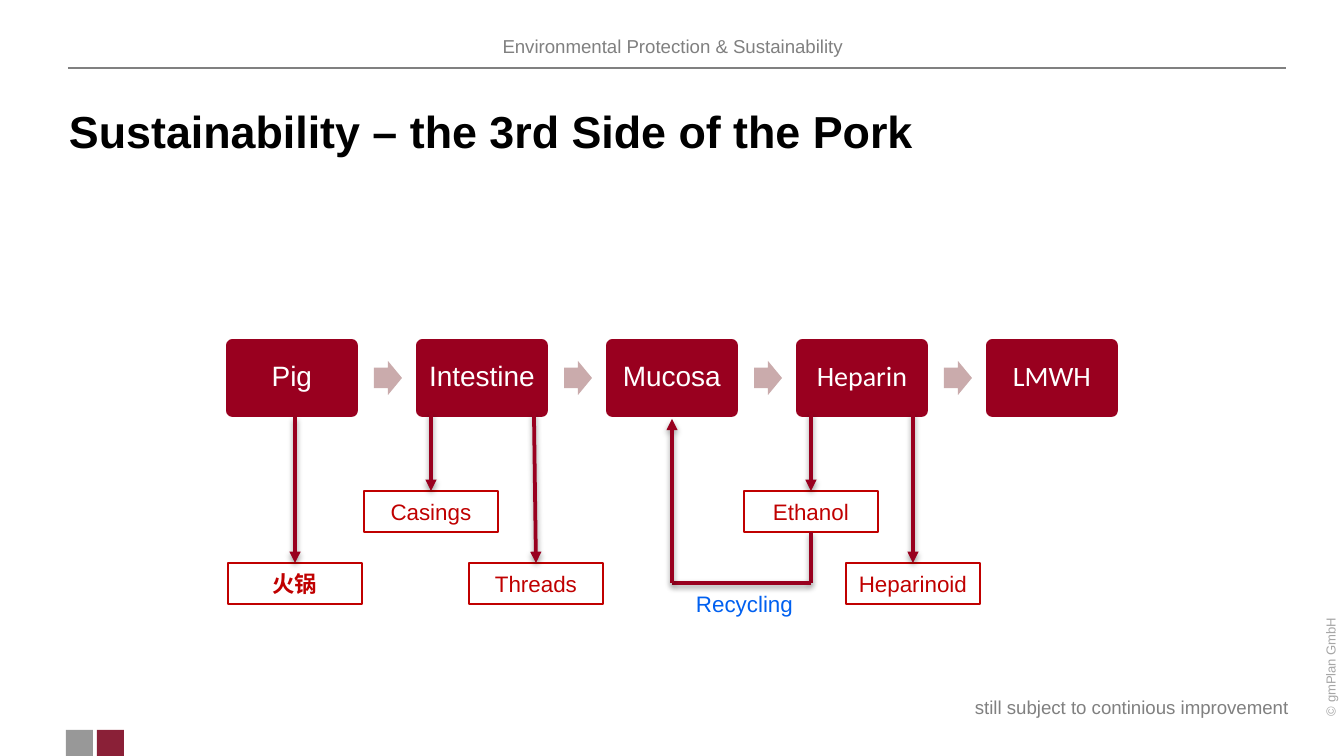
from dataclasses import dataclass

from lxml.etree import SubElement
from pptx import Presentation
from pptx.dml.color import RGBColor
from pptx.enum.shapes import MSO_CONNECTOR as Connector, MSO_SHAPE as Shape
from pptx.enum.text import MSO_ANCHOR as Anchor, PP_ALIGN as Align
from pptx.oxml.ns import qn
from pptx.util import Pt

EMU_PER_PX = 914400 / 134.4
TOP, BOTTOM = 0, 2


def px(length):
    return round(length * EMU_PER_PX)


@dataclass(frozen=True)
class Theme:
    font: str = "Arial"
    step_font: str = "Calibri"
    cjk_font: str = "Noto Sans CJK SC"
    black: str = "000000"
    white: str = "FFFFFF"
    gray: str = "808080"
    pale_gray: str = "A6A6A6"
    square_gray: str = "989898"
    square_red: str = "8A2037"
    crimson: str = "99001F"
    rose: str = "CAABAC"
    red: str = "C00000"
    blue: str = "0060F0"
    title: int = 24
    step: int = 15
    label: int = 12
    small: int = 10
    tiny: int = 7


class Canvas:
    def __init__(self, slide, theme):
        self.slide = slide
        self.theme = theme

    def set_text(self, target, words, size, color, font=None, bold=False,
                 align=Align.CENTER, anchor=Anchor.MIDDLE, inset=7, spacing=None):
        frame = target.text_frame
        frame.word_wrap = True
        frame.vertical_anchor = anchor
        frame.margin_left = frame.margin_right = px(inset)
        frame.margin_top = frame.margin_bottom = px(inset)
        paragraph = frame.paragraphs[0]
        paragraph.alignment = align
        if spacing:
            paragraph.line_spacing = spacing
        run = paragraph.add_run()
        run.text = words
        run.font.name = font or self.theme.font
        run.font.size = Pt(size)
        run.font.bold = bold
        run.font.color.rgb = RGBColor.from_string(color)
        # East Asian glyphs take their font from a separate element
        SubElement(run.font._element, qn("a:ea"), typeface=run.font.name)

    def text(self, left, top, width, height, words, size, color, **style):
        box = self.slide.shapes.add_textbox(px(left), px(top), px(width), px(height))
        self.set_text(box, words, size, color, **style)
        return box

    def shape(self, kind, left, top, width, height, fill=None, line=None,
              weight=1, adjust=()):
        shape = self.slide.shapes.add_shape(
            kind, px(left), px(top), px(width), px(height))
        shape.shadow.inherit = False
        for index, value in enumerate(adjust):
            shape.adjustments[index] = value
        if fill:
            shape.fill.solid()
            shape.fill.fore_color.rgb = RGBColor.from_string(fill)
        else:
            shape.fill.background()
        if line:
            shape.line.color.rgb = RGBColor.from_string(line)
            shape.line.width = Pt(weight)
        else:
            shape.line.fill.background()
        return shape

    def line(self, start, end, color, weight, arrow=False, shadow=False,
             begin_at=None, end_at=None):
        link = self.slide.shapes.add_connector(
            Connector.STRAIGHT, *map(px, start), *map(px, end))
        link.line.color.rgb = RGBColor.from_string(color)
        link.line.width = Pt(weight)
        if begin_at:
            link.begin_connect(*begin_at)
        if end_at:
            link.end_connect(*end_at)
        if arrow:
            SubElement(link.line._get_or_add_ln(), qn("a:tailEnd"), type="triangle")
        effects = SubElement(link._element.spPr, qn("a:effectLst"))
        if shadow:
            outer = SubElement(effects, qn("a:outerShdw"), blurRad="38100",
                               dist="20000", dir="5400000", rotWithShape="0")
            tint = SubElement(outer, qn("a:srgbClr"), val=self.theme.black)
            SubElement(tint, qn("a:alpha"), val="38000")
        return link

    def flow(self, start, end, arrow=True, **joins):
        return self.line(start, end, self.theme.crimson, 2, arrow, True, **joins)


def main():
    theme = Theme()
    deck = Presentation()
    deck.slide_width, deck.slide_height = px(1344), px(756)
    canvas = Canvas(deck.slides.add_slide(deck.slide_layouts[6]), theme)

    # Page frame
    for left, color in ((66, theme.square_gray), (97, theme.square_red)):
        canvas.shape(Shape.RECTANGLE, left, 730, 27, 26, fill=color)
    canvas.text(1, 28, 1343, 34, "Environmental Protection & Sustainability",
                theme.small, theme.gray, anchor=Anchor.TOP)
    canvas.line((68, 68), (1286, 68), theme.gray, 0.75)
    notice = canvas.text(1242, 654, 177, 26, "© gmPlan GmbH",
                         theme.tiny, theme.pale_gray)
    notice.rotation = 270

    # Title and remark
    canvas.text(69, 93, 1216, 75, "Sustainability – the 3rd Side of the Pork",
                theme.title, theme.black, bold=True, align=Align.LEFT, inset=0)
    canvas.text(759, 686, 529, 42, "still subject to continious improvement",
                theme.small, theme.gray, align=Align.RIGHT, inset=0)

    # Process chain
    first_left, pitch = 224, 190
    chain = (("Pig", theme.font), ("Intestine", theme.font),
             ("Mucosa", theme.font), ("Heparin", theme.step_font),
             ("LMWH", theme.step_font))
    steps = {}
    for index, (name, font) in enumerate(chain):
        left = first_left + index * pitch
        if index:
            canvas.shape(Shape.RIGHT_ARROW, left - 40, 361, 28, 34,
                         fill=theme.rose, adjust=(0.6, 0.5))
        steps[name] = canvas.shape(Shape.ROUNDED_RECTANGLE, left, 337, 136, 82,
                                   theme.crimson, theme.white, 2, (0.1,))
        canvas.set_text(steps[name], name, theme.step, theme.white,
                        font=font, spacing=0.9)

    # By-products: name, box centre, box top, arrow start
    upper, lower = 491, 563
    by_products = (("火锅", 295, lower, (295, 417)),
                   ("Casings", 431, upper, (431, 413)),
                   ("Threads", 536, lower, (534, 413)),
                   ("Ethanol", 811, upper, (811, 413)),
                   ("Heparinoid", 913, lower, (913, 413)))
    boxes = {}
    for name, center, top, start in by_products:
        boxes[name] = canvas.shape(Shape.RECTANGLE, center - 67, top, 134, 41,
                                   line=theme.red)
        chinese = not name.isascii()
        canvas.set_text(boxes[name], name, theme.label, theme.red, bold=chinese,
                        font=theme.cjk_font if chinese else theme.font)
        canvas.flow(start, (center, top), end_at=(boxes[name], TOP))

    # Recycling loop from ethanol back to mucosa
    right_corner, left_corner = (811, 583), (672, 583)
    canvas.flow((811, 532), right_corner, arrow=False,
                begin_at=(boxes["Ethanol"], BOTTOM))
    canvas.flow(right_corner, left_corner, arrow=False)
    canvas.flow(left_corner, (672, 419), end_at=(steps["Mucosa"], BOTTOM))
    canvas.text(689, 583, 112, 41, "Recycling", theme.label, theme.blue,
                align=Align.LEFT, anchor=Anchor.TOP)

    deck.save("out.pptx")


if __name__ == "__main__":
    main()
